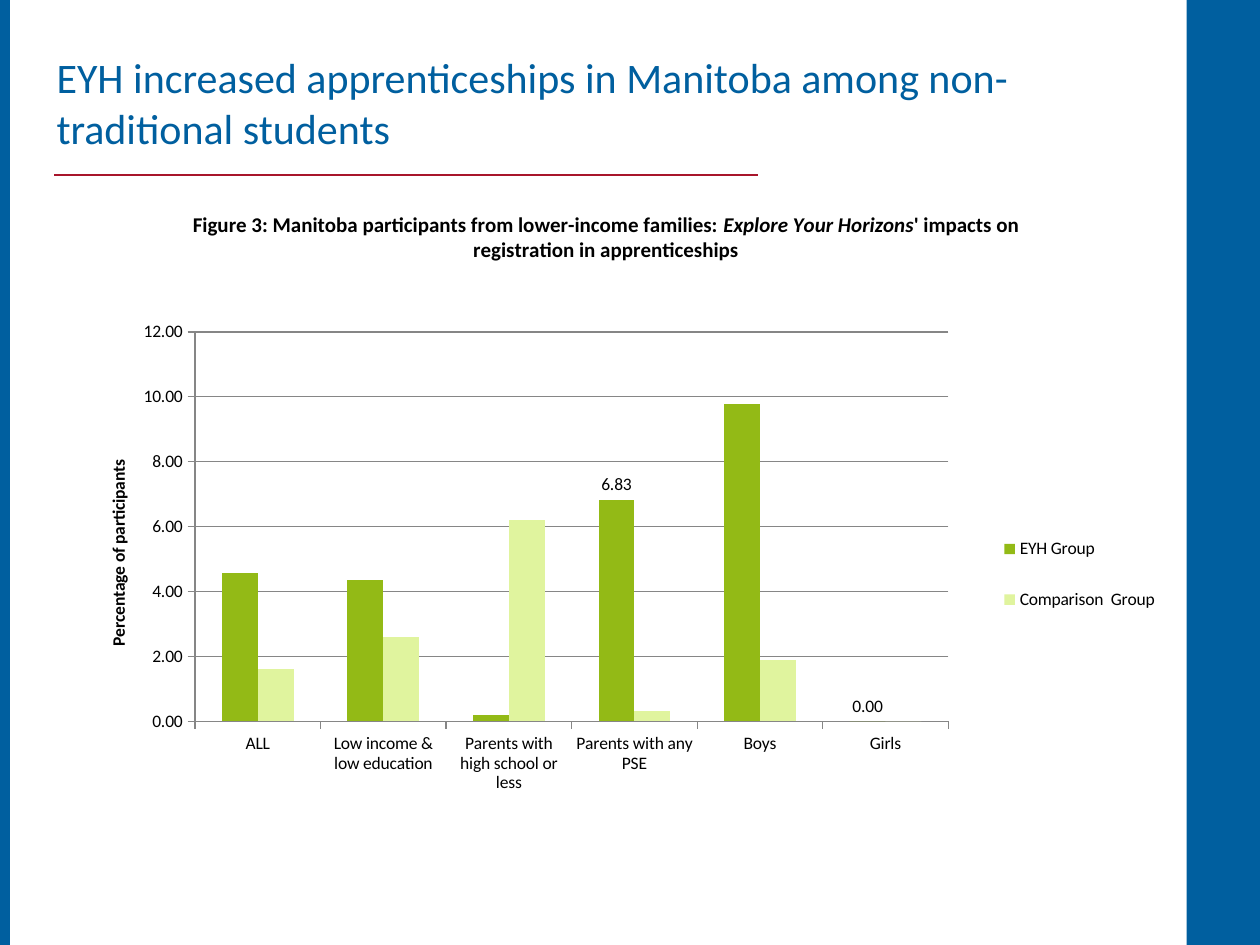
from pptx import Presentation
from pptx.chart.data import CategoryChartData
from pptx.dml.color import RGBColor
from pptx.enum.chart import XL_CHART_TYPE, XL_LABEL_POSITION, XL_LEGEND_POSITION, XL_TICK_MARK
from pptx.enum.shapes import MSO_CONNECTOR, MSO_SHAPE
from pptx.enum.text import MSO_ANCHOR
from pptx.oxml.ns import qn
from pptx.util import Cm, Pt
from lxml.etree import SubElement

BLUE, RED, GREY, BLACK = "005F9F", "A8152B", "868686", "000000"
CATEGORIES = [
    "ALL", "Low income & low education", "Parents with high school or less",
    "Parents with any PSE", "Boys", "Girls",
]
SERIES = [
    ("EYH Group", [4.57, 4.34, 0.19, 6.83, 9.77, 0], "93BA16"),
    ("Comparison  Group", [1.6, 2.6, 6.2, 0.3, 1.9, 0], "E0F49E"),
]
LABELLED_POINTS = (3, 5)
CHART_TITLE = [
    ("Figure 3: Manitoba participants from lower-income families: ", False),
    ("Explore Your Horizons", True),
    ("' impacts on registration in apprenticeships", False),
]


def colour(value):
    return RGBColor.from_string(value)


def apply_format(target, **values):
    for name, value in values.items():
        setattr(target, name, value)


def format_font(font, size, hex_colour, **values):
    apply_format(font, name="Calibri", size=Pt(size), **values)
    font.color.rgb = colour(hex_colour)


def format_line(line, hex_colour):
    line.color.rgb = colour(hex_colour)
    line.width = Pt(0.75)


def add_bar(slide, left, top, width, height):
    shape = slide.shapes.add_shape(MSO_SHAPE.RECTANGLE, Cm(left), Cm(top), Cm(width), Cm(height))
    shape.shadow.inherit = False
    shape.fill.solid()
    shape.fill.fore_color.rgb = colour(BLUE)
    shape.line.fill.background()


def add_heading(slide, left, top, width, height):
    text_frame = slide.shapes.add_textbox(Cm(left), Cm(top), Cm(width), Cm(height)).text_frame
    apply_format(text_frame, word_wrap=True, vertical_anchor=MSO_ANCHOR.MIDDLE)
    paragraph = text_frame.paragraphs[0]
    paragraph.text = "EYH increased apprenticeships in Manitoba among non-traditional students"
    format_font(paragraph.runs[0].font, 24, BLUE)
    rule_left, rule_top = left + 0.2, top + height + 0.25
    rule = slide.shapes.add_connector(
        MSO_CONNECTOR.STRAIGHT, Cm(rule_left), Cm(rule_top), Cm(rule_left + 14.2), Cm(rule_top)
    )
    format_line(rule.line, RED)
    SubElement(rule._element.spPr, qn("a:effectLst"))


def set_layout(element, index, inner=False, **fractions):
    for old_layout in element.findall(qn("c:layout")):
        element.remove(old_layout)
    layout = SubElement(element, qn("c:layout"))
    element.insert(index, layout)
    manual = SubElement(layout, qn("c:manualLayout"))
    if inner:
        SubElement(manual, qn("c:layoutTarget")).set("val", "inner")
    for name in ("x", "y"):
        SubElement(manual, qn(f"c:{name}Mode")).set("val", "edge")
    for name, value in fractions.items():
        SubElement(manual, qn(f"c:{name}")).set("val", str(value))


def format_axes(chart):
    value_axis, category_axis = chart.value_axis, chart.category_axis
    apply_format(value_axis, minimum_scale=0, maximum_scale=12, major_unit=2, has_major_gridlines=True)
    apply_format(value_axis.tick_labels, number_format="0.00", number_format_is_linked=False)
    format_line(value_axis.major_gridlines.format.line, GREY)
    for axis in (value_axis, category_axis):
        apply_format(axis, major_tick_mark=XL_TICK_MARK.OUTSIDE, minor_tick_mark=XL_TICK_MARK.NONE)
        format_line(axis.format.line, GREY)
        format_font(axis.tick_labels.font, 10, BLACK)
    axis_title = value_axis.axis_title
    paragraph = axis_title.text_frame.paragraphs[0]
    paragraph.text = "Percentage of participants"
    format_font(paragraph.runs[0].font, 10, BLACK, bold=True)
    set_layout(axis_title._element, 1, x=0.06, y=0.37)


def format_series(plot):
    apply_format(plot, gap_width=150, overlap=0, vary_by_categories=False)
    for series, (_, _, hex_colour) in zip(plot.series, SERIES):
        series.format.fill.solid()
        series.format.fill.fore_color.rgb = colour(hex_colour)
    eyh_group = plot.series[0]
    apply_format(eyh_group.data_labels, show_value=False)
    for index in LABELLED_POINTS:
        eyh_group.points[index].data_label.position = XL_LABEL_POSITION.OUTSIDE_END


def add_apprenticeship_chart(slide, left, top, width, height):
    chart_data = CategoryChartData(number_format="0.00")
    chart_data.categories = CATEGORIES
    for name, values, _ in SERIES:
        chart_data.add_series(name, values)
    chart = slide.shapes.add_chart(
        XL_CHART_TYPE.COLUMN_CLUSTERED, Cm(left), Cm(top), Cm(width), Cm(height), chart_data
    ).chart
    format_font(chart.font, 10, BLACK)
    apply_format(chart, has_title=True, has_legend=True)
    paragraph = chart.chart_title.text_frame.paragraphs[0]
    for text, italic in CHART_TITLE:
        run = paragraph.add_run()
        run.text = text
        format_font(run.font, 12, BLACK, bold=True, italic=italic)
    apply_format(chart.legend, position=XL_LEGEND_POSITION.RIGHT, include_in_layout=False)
    format_font(chart.legend.font, 10, BLACK)
    set_layout(chart.legend._element, 1, x=0.84, y=0.44, w=0.15, h=0.18)
    plot_area = chart._chartSpace.chart.plotArea
    set_layout(plot_area, 0, inner=True, x=0.14, y=0.2, w=0.66, h=0.53)
    format_axes(chart)
    format_series(chart.plots[0])


def main():
    presentation = Presentation()
    apply_format(presentation, slide_width=Cm(25.4), slide_height=Cm(19.05))
    slide = presentation.slides.add_slide(presentation.slide_layouts[6])
    add_bar(slide, 23.92, 0, 1.48, 19.05)
    add_bar(slide, 0, 0, 0.2, 19.05)
    add_heading(slide, 0.89, 0.84, 22.38, 2.44)
    add_apprenticeship_chart(slide, 0.71, 3.73, 23.01, 14.81)
    presentation.save("out.pptx")


if __name__ == "__main__":
    main()
